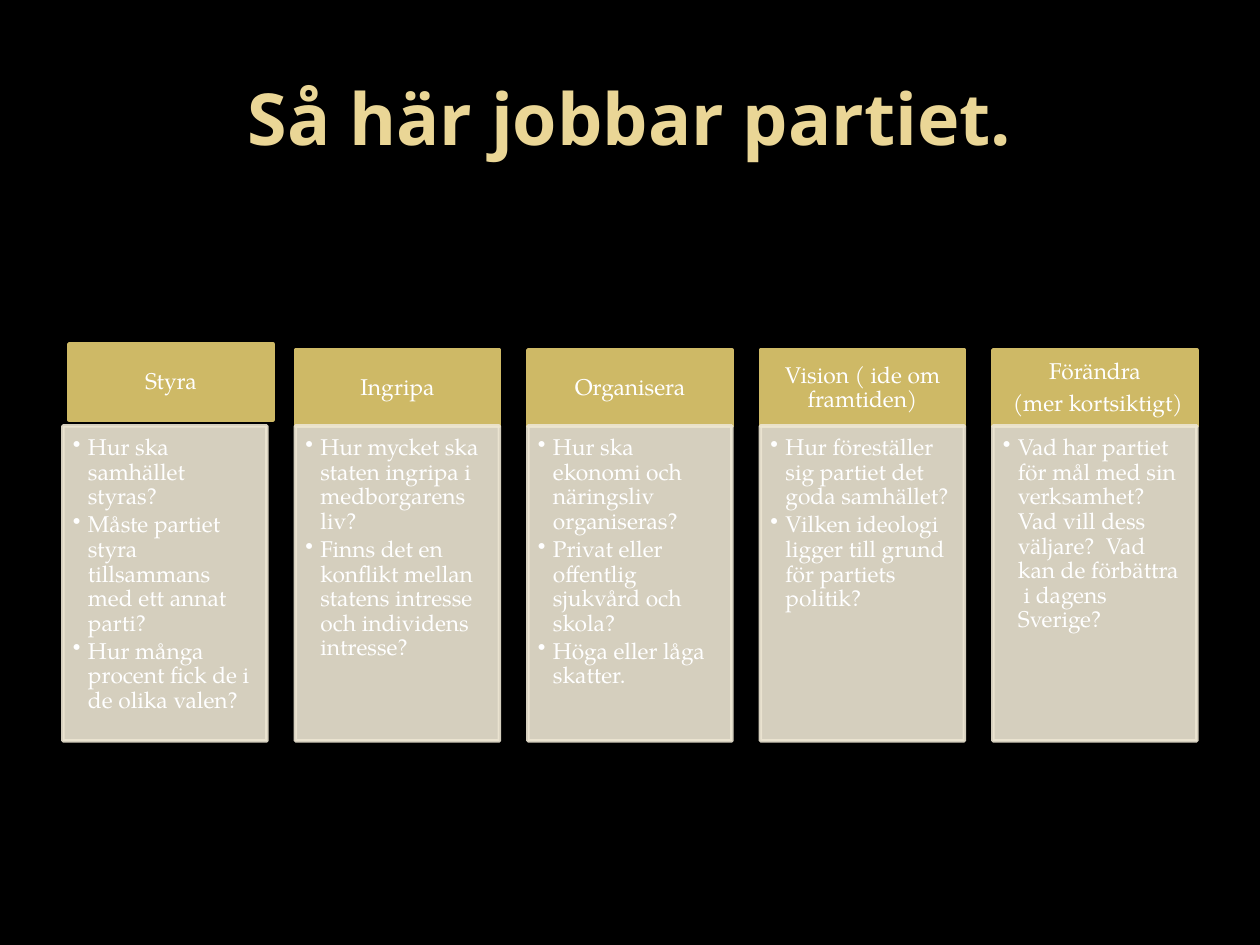
from lxml import etree
from pptx import Presentation
from pptx import util as u
from pptx.dml.color import RGBColor
from pptx.enum import shapes, text
from pptx.oxml.ns import qn

# Content: heading lines, then questions
TITLE = "Så här jobbar partiet."
COLUMNS = [
    (["Styra"],
     ["Hur ska samhället styras?",
      "Måste partiet styra tillsammans med ett annat parti?",
      "Hur många procent fick de i de olika valen?"]),
    (["Ingripa"],
     ["Hur mycket ska staten ingripa i medborgarens liv?",
      "Finns det en konflikt mellan statens intresse och individens intresse?"]),
    (["Organisera"],
     ["Hur ska ekonomi och näringsliv organiseras?",
      "Privat eller offentlig sjukvård och skola?",
      "Höga eller låga skatter."]),
    (["Vision ( ide om framtiden)"],
     ["Hur föreställer sig partiet det goda samhället?",
      "Vilken ideologi ligger till grund för partiets politik?"]),
    (["Förändra", " (mer kortsiktigt)"],
     ["Vad har partiet för mål med sin verksamhet? Vad vill dess väljare?  Vad  "
      "kan de förbättra  i dagens Sverige?"]),
]

THEME = {
    "background": "000000", "title": "EAD696", "header": "CEB966",
    "panel": "EDE6D3", "text": "FFFFFF",
    "title_font": "Noto Sans", "body_font": "TeX Gyre Pagella",
    "title_size": 41, "body_size": 13, "line": 2, "panel_alpha": 90,
}

# Layout in px, 126 to the inch
PX = u.Inches(1) // 126
LEFT, RIGHT, COL_W = 63, 1197, 204
HEADER_Y, HEADER_H = 350, 76
PANEL_Y, PANEL_H = 426, 315
FIRST_HEADER_SHIFT = (6, -6)  # the first heading sits slightly out of line
BULLET_INDENT = 15


def color(name):
    return RGBColor.from_string(THEME[name])


def write(tf, lines, *, font="body_font", size="body_size", fill="text", bold=False,
          align=text.PP_ALIGN.CENTER, anchor=text.MSO_ANCHOR.MIDDLE,
          insets=(13, 8, 13, 8), spacing=None, after=0, bullet=False):
    tf.word_wrap = True
    tf.vertical_anchor = anchor
    tf.margin_left, tf.margin_top, tf.margin_right, tf.margin_bottom = (
        i * PX for i in insets)
    for i, line in enumerate(lines):
        p = tf.add_paragraph() if i else tf.paragraphs[0]
        p.alignment = align
        p.line_spacing = spacing
        p.space_before, p.space_after = u.Pt(0), u.Pt(after)
        if bullet:
            pPr = p._p.get_or_add_pPr()
            pPr.set("marL", str(BULLET_INDENT * PX))
            pPr.set("indent", str(-BULLET_INDENT * PX))
            etree.SubElement(pPr, qn("a:buChar")).set("char", "•")
        r = p.add_run()
        r.text = line
        r.font.name = THEME[font]
        r.font.size = u.Pt(THEME[size])
        r.font.bold = bold
        r.font.color.rgb = color(fill)


def add_box(s, x, y, w, h, fill, alpha=None):
    sp = s.shapes.add_shape(shapes.MSO_SHAPE.RECTANGLE,
                            *(u.Emu(round(v * PX)) for v in (x, y, w, h)))
    sp.shadow.inherit = False
    sp.fill.solid()
    sp.fill.fore_color.rgb = color(fill)
    sp.line.color.rgb = color(fill)
    sp.line.width = u.Pt(THEME["line"])
    if alpha:
        for clr in sp._element.spPr.iter(qn("a:srgbClr")):
            etree.SubElement(clr, qn("a:alpha")).set("val", str(alpha * 1000))
    return sp


def main():
    prs = Presentation()
    prs.slide_width, prs.slide_height = u.Inches(10), u.Inches(7.5)
    s = prs.slides.add_slide(prs.slide_layouts[6])
    s.background.fill.solid()
    s.background.fill.fore_color.rgb = color("background")

    # Title
    title = s.shapes.add_textbox(*(v * PX for v in (LEFT, 38, RIGHT - LEFT, 158)))
    write(title.text_frame, [TITLE], font="title_font", size="title_size",
          fill="title", bold=True)

    # Evenly spaced columns: heading above a panel of questions
    pitch = (RIGHT - LEFT - COL_W) / (len(COLUMNS) - 1)
    for i, (heading, questions) in enumerate(COLUMNS):
        x = LEFT + i * pitch
        dx, dy = (0, 0) if i else FIRST_HEADER_SHIFT
        header = add_box(s, x + dx, HEADER_Y + dy, COL_W, HEADER_H, "header")
        write(header.text_frame, heading, spacing=0.9, after=4.55)
        panel = add_box(s, x, PANEL_Y, COL_W, PANEL_H, "panel", THEME["panel_alpha"])
        write(panel.text_frame, questions, align=text.PP_ALIGN.LEFT,
              anchor=text.MSO_ANCHOR.TOP, insets=(10, 10, 13, 14),
              spacing=0.9, after=1.95, bullet=True)

    prs.save("out.pptx")


if __name__ == "__main__":
    main()
